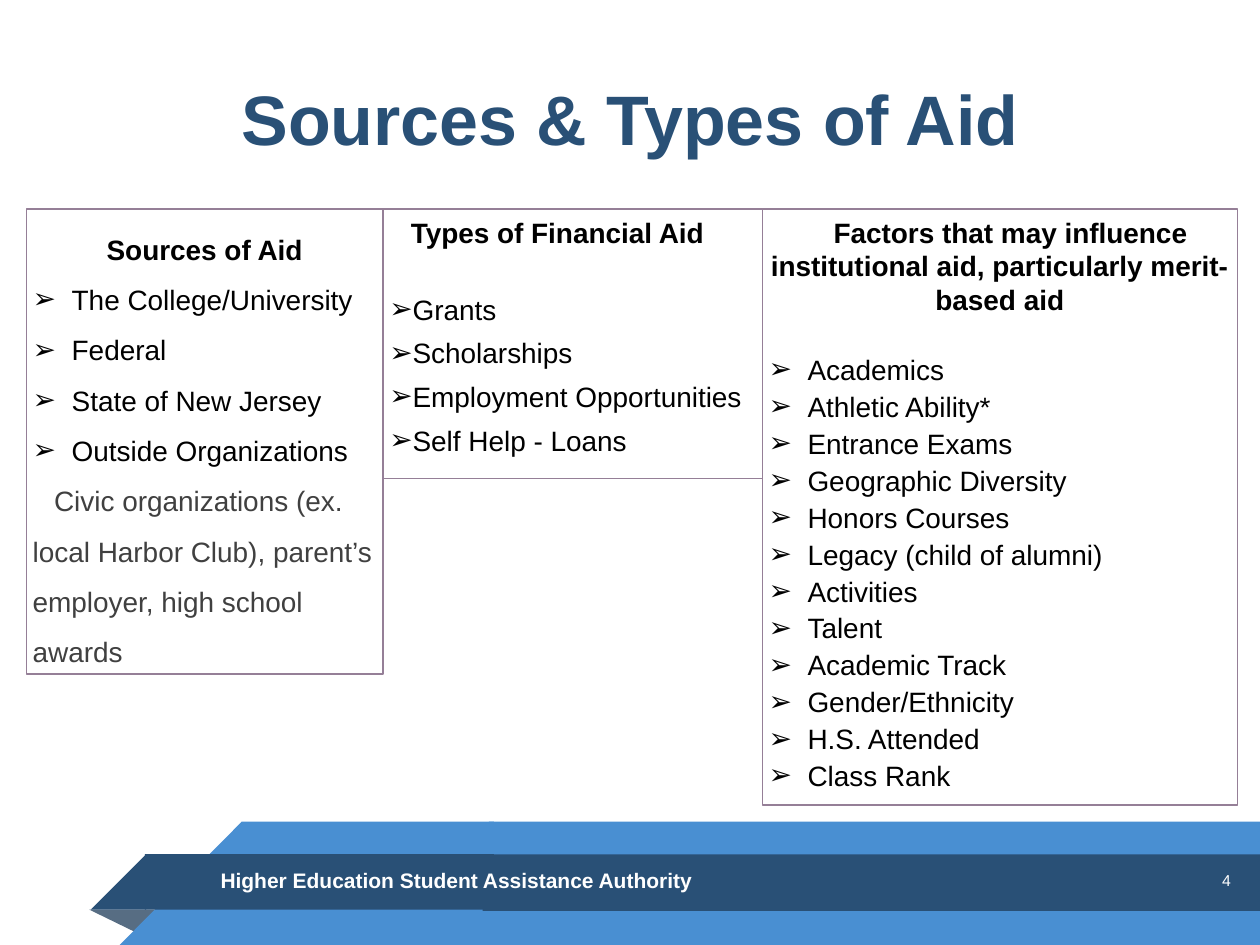
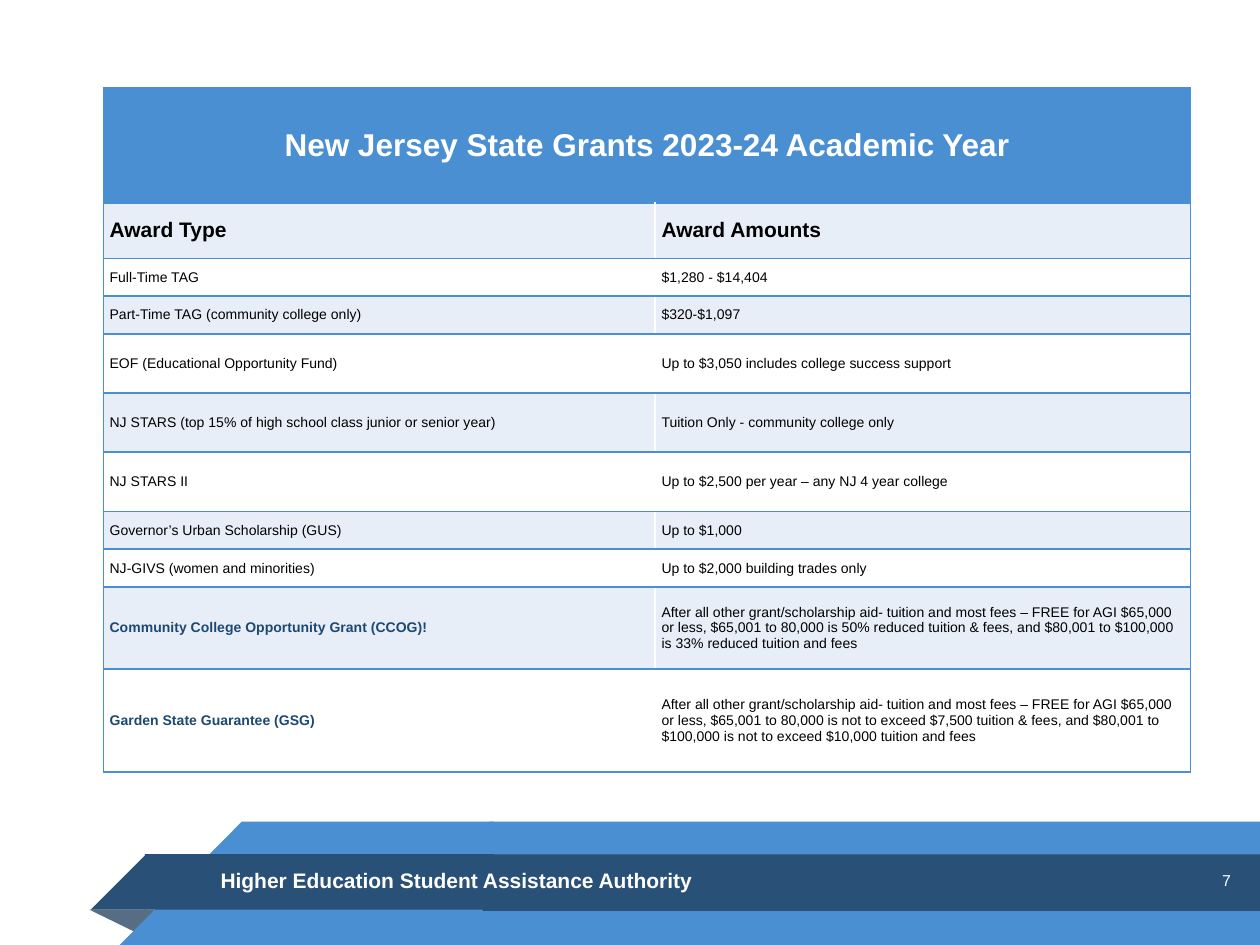
from lxml import etree
from pptx import Presentation
from pptx import util as u
from pptx.dml.color import RGBColor
from pptx.enum import shapes, text
from pptx.oxml.ns import qn

NAVY, BLUE, SLATE, PALE = "295076", "498FD2", "576D83", "E8EEF7"
MAUVE, GREY, ACCENT = "957F97", "404040", "1C4871"
BLACK, WHITE = "000000", "FFFFFF"
CENTER, RIGHT = text.PP_ALIGN.CENTER, text.PP_ALIGN.RIGHT
TITLE_ONLY, BLANK = 5, 6

SOURCES = ["The College/University", "Federal", "State of New Jersey", "Outside Organizations"]
CIVIC_NOTE = ("Civic organizations (ex. local Harbor Club), parent’s employer, "
              "high school awards")
TYPES = ["Grants", "Scholarships", "Employment Opportunities", "Self Help - Loans"]
FACTORS = ["Academics", "Athletic Ability*", "Entrance Exams", "Geographic Diversity",
           "Honors Courses", "Legacy (child of alumni)", "Activities", "Talent",
           "Academic Track", "Gender/Ethnicity", "H.S. Attended", "Class Rank"]

AFTER_AID = ("After all other grant/scholarship aid- tuition and most fees – FREE for AGI "
             "$65,000 or less, $65,001 to 80,000 is ")
GRANTS = [
    ("Full-Time TAG", "$1,280 - $14,404", 0.3),
    ("Part-Time TAG (community college only)", "$320-$1,097", 0.3),
    ("EOF (Educational Opportunity Fund)", "Up to $3,050 includes college success support", 0.47),
    ("NJ STARS (top 15% of high school class junior or senior year)",
     "Tuition Only - community college only", 0.47),
    ("NJ STARS II", "Up to $2,500 per year – any NJ 4 year college", 0.47),
    ("Governor’s Urban Scholarship (GUS)", "Up to $1,000", 0.3),
    ("NJ-GIVS (women and minorities)", "Up to $2,000 building trades only", 0.3),
    ("Community College Opportunity Grant (CCOG)!",
     AFTER_AID + "50% reduced tuition & fees, and $80,001 to $100,000 is 33% reduced "
     "tuition and fees", 0.65),
    ("Garden State Guarantee (GSG)",
     AFTER_AID + "not to exceed $7,500 tuition & fees, and $80,001 to $100,000 is not to "
     "exceed $10,000 tuition and fees", 0.82),
]
FEATURED = {"Community College Opportunity Grant (CCOG)!", "Garden State Guarantee (GSG)"}


def rgb(value):
    return RGBColor.from_string(value)


class Deck:
    font = "Arial"
    margin = u.Inches(0.05)

    def __init__(self):
        self.prs = Presentation()
        self.prs.slide_width, self.prs.slide_height = u.Inches(10), u.Inches(7.5)
        self.slide = None

    def new_slide(self, layout, number):
        self.slide = self.prs.slides.add_slide(self.prs.slide_layouts[layout])
        self.banner()
        self.label("Higher Education Student Assistance Authority",
                   (1.7, 6.84, 4.22, 0.29), 12, bold=True)
        self.label(str(number), (9.64, 6.86, 0.18, 0.25), 9, align=RIGHT, wrap=False)

    def banner(self):
        self.rect((3.88, 6.52, 6.12, 0.98), BLUE)
        self.triangle([(1.29, 7.22), (1.1, 7.41), (0.71, 7.22)], SLATE)
        self.rect((1.92, 6.52, 2, 0.98), BLUE)
        self.triangle([(1.92, 7.5), (0.95, 7.5), (1.92, 6.52)], BLUE)
        self.rect((1.15, 6.78, 2.77, 0.44), NAVY)
        self.triangle([(1.16, 7.22), (0.72, 7.22), (1.16, 6.78)], NAVY)
        self.rect((3.83, 6.78, 6.17, 0.45), NAVY)

    def paint(self, shape, fill=None, line=None):
        shape.shadow.inherit = False
        if fill:
            shape.fill.solid()
            shape.fill.fore_color.rgb = rgb(fill)
        else:
            shape.fill.background()
        if line:
            shape.line.color.rgb = rgb(line)
            shape.line.width = u.Pt(0.75)
        else:
            shape.line.fill.background()

    def rect(self, box, fill=None, line=None):
        shape = self.slide.shapes.add_shape(shapes.MSO_SHAPE.RECTANGLE, *map(u.Inches, box))
        self.paint(shape, fill, line)
        return shape

    def triangle(self, corners, fill):
        first, *rest = [(u.Inches(x), u.Inches(y)) for x, y in corners]
        builder = self.slide.shapes.build_freeform(*first)
        builder.add_line_segments(rest, close=True)
        self.paint(builder.convert_to_shape(), fill)

    def frame(self, holder, anchor, wrap=True):
        frame = holder.text_frame
        frame.word_wrap = wrap
        frame.auto_size = text.MSO_AUTO_SIZE.NONE
        frame.vertical_anchor = anchor
        frame.margin_left = frame.margin_right = self.margin
        frame.margin_top = frame.margin_bottom = self.margin
        return frame

    def style(self, paragraph, size, color, bold=False, align=text.PP_ALIGN.LEFT):
        paragraph.alignment = align
        for run in paragraph.runs:
            run.font.name = self.font
            run.font.size = u.Pt(size)
            run.font.bold = bold
            run.font.color.rgb = rgb(color)

    def label(self, wording, box, size, bold=False, align=text.PP_ALIGN.LEFT, wrap=True):
        holder = self.slide.shapes.add_textbox(*map(u.Inches, box))
        frame = self.frame(holder, text.MSO_ANCHOR.MIDDLE, wrap)
        frame.text = wording
        self.style(frame.paragraphs[0], size, WHITE, bold, align)

    def title(self, wording):
        title = self.slide.shapes.title
        title.left, title.top = u.Inches(0.5), u.Inches(0.31)
        title.width, title.height = u.Inches(9), u.Inches(1.25)
        frame = self.frame(title, text.MSO_ANCHOR.MIDDLE)
        frame.text = wording
        self.style(frame.paragraphs[0], 40, NAVY, True, CENTER)

    def indent(self, paragraph, left, first, bullet=None):
        props = paragraph._p.get_or_add_pPr()
        props.set("marL", str(u.Inches(left)))
        props.set("indent", str(u.Inches(first)))
        if bullet:
            etree.SubElement(props, qn("a:buFont")).set("typeface", self.font)
            etree.SubElement(props, qn("a:buChar")).set("char", bullet)

    def column(self, box, heading, items, spacing, hang=0.31, heading_align=CENTER,
               heading_indent=0.17, heading_spacing=1.0, gap=0, note=None):
        frame = self.frame(self.rect(box, line=MAUVE), text.MSO_ANCHOR.TOP)
        head = frame.paragraphs[0]
        head.text = heading
        self.indent(head, 0, heading_indent)
        head.line_spacing = heading_spacing
        head.space_after = u.Pt(gap)
        self.style(head, 16, BLACK, True, heading_align)
        for item in items:
            entry = frame.add_paragraph()
            entry.text = item
            self.indent(entry, hang, -hang, "➢")
            entry.line_spacing = spacing
            self.style(entry, 16, BLACK)
        if note:
            remark = frame.add_paragraph()
            remark.text = note
            self.indent(remark, 0, 0.17)
            remark.line_spacing = spacing
            self.style(remark, 16, GREY)

    def borders(self, cell, **sides):
        props = cell._tc.get_or_add_tcPr()
        for side in "LRTB":
            line = etree.SubElement(props, qn(f"a:ln{side}"), w=str(u.Pt(1)))
            fill = etree.SubElement(line, qn("a:solidFill"))
            etree.SubElement(fill, qn("a:srgbClr"), val=sides.get(side, BLUE))

    def cell(self, cell, wording, fill, size, color=BLACK, bold=False,
             align=text.PP_ALIGN.LEFT, **sides):
        cell.text = wording
        cell.vertical_anchor = text.MSO_ANCHOR.MIDDLE
        cell.margin_left = cell.margin_right = self.margin
        cell.margin_top = cell.margin_bottom = self.margin
        self.style(cell.text_frame.paragraphs[0], size, color, bold, align)
        self.borders(cell, **sides)
        cell.fill.solid()
        cell.fill.fore_color.rgb = rgb(fill)

    def grant_table(self, heading, labels, grants):
        heights = [0.91, 0.44] + [height for _, _, height in grants]
        table = self.slide.shapes.add_table(
            len(heights), 2, u.Inches(0.82), u.Inches(0.7),
            u.Inches(8.63), u.Inches(sum(heights))).table
        for column, width in zip(table.columns, (4.38, 4.25)):
            column.width = u.Inches(width)
        for row, height in zip(table.rows, heights):
            row.height = u.Inches(height)
        banner = table.cell(0, 0)
        banner.merge(table.cell(0, 1))
        self.cell(banner, heading, BLUE, 18, WHITE, True, CENTER)
        self.borders(table.cell(0, 1))
        lines = [labels] + [(award, amount) for award, amount, _ in grants]
        for i, (award, amount) in enumerate(lines):
            fill = WHITE if i % 2 else PALE
            size, header = (8, False) if i else (12, True)
            featured = award in FEATURED
            self.cell(table.cell(i + 1, 0), award, fill, size,
                      ACCENT if featured else BLACK, header or featured, R=WHITE)
            self.cell(table.cell(i + 1, 1), amount, fill, size, bold=header, L=WHITE)


def main():
    deck = Deck()

    deck.new_slide(TITLE_ONLY, 4)
    deck.title("Sources & Types of Aid")
    deck.column((0.21, 1.66, 2.83, 3.69), "Sources of Aid", SOURCES, 1.5,
                heading_indent=0, heading_spacing=1.5, note=CIVIC_NOTE)
    deck.column((3.04, 1.66, 3.01, 2.14), "Types of Financial Aid", TYPES, 1.3, hang=0,
                heading_align=text.PP_ALIGN.LEFT, gap=19)
    deck.column((6.05, 1.66, 3.77, 4.73),
                "Factors that may influence institutional aid, particularly merit-based aid",
                FACTORS, 1.1, gap=19)

    deck.new_slide(BLANK, 7)
    deck.grant_table("New Jersey State Grants 2023-24 Academic Year",
                     ("Award Type", "Award Amounts"), GRANTS)

    deck.prs.save("out.pptx")


if __name__ == "__main__":
    main()
